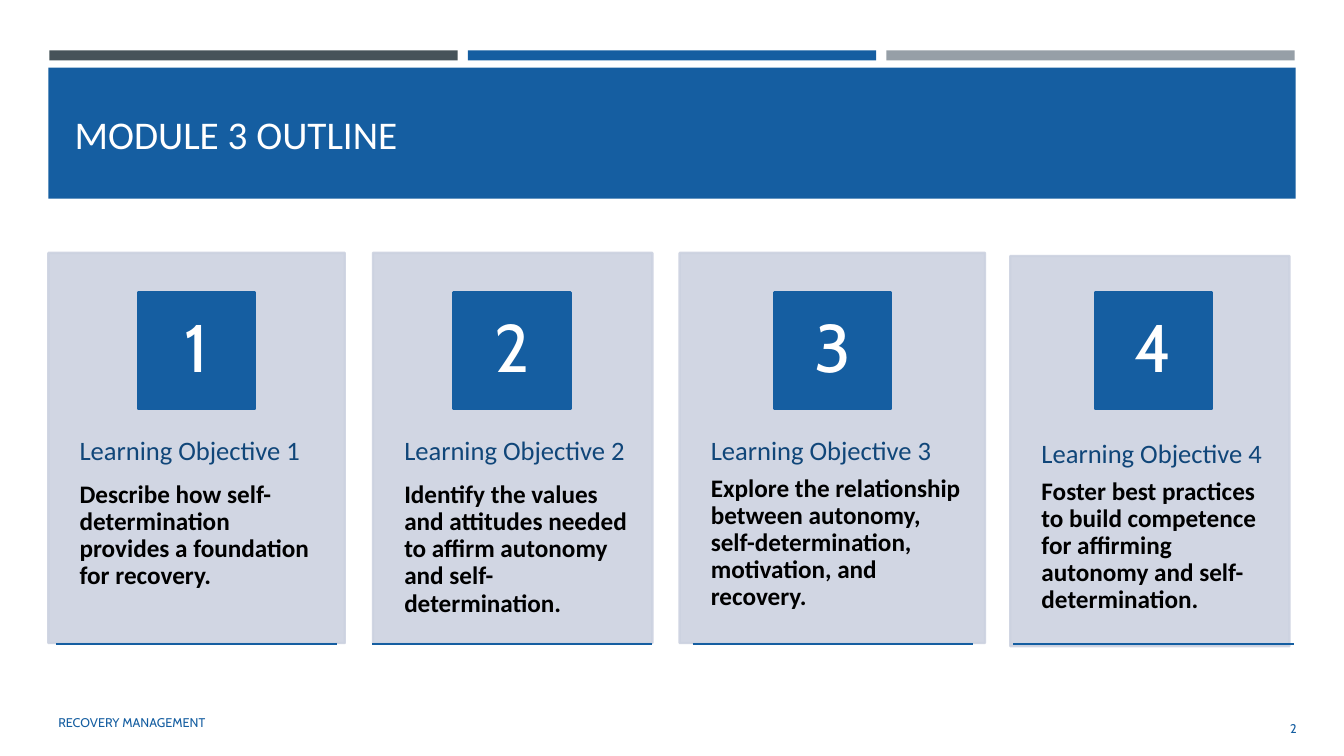
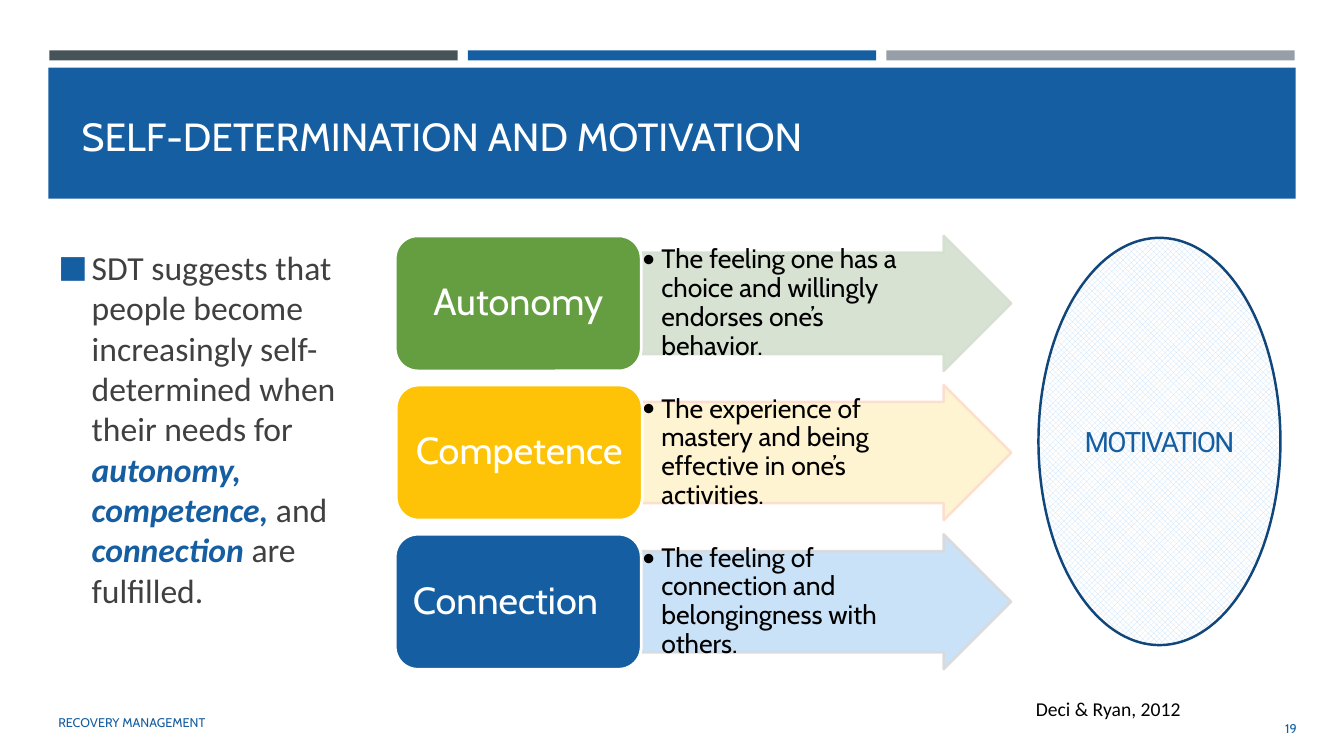
from lxml.etree import SubElement
from pptx import Presentation
from pptx.dml.color import RGBColor
from pptx.enum.dml import MSO_PATTERN
from pptx.enum.shapes import MSO_CONNECTOR, MSO_SHAPE
from pptx.enum.text import MSO_ANCHOR, MSO_AUTO_SIZE, PP_ALIGN
from pptx.oxml.ns import qn
from pptx.util import Inches, Pt

COLORS = {
    "blue": "155EA1", "navy": "104679", "slate": "465359", "gray": "969FA7",
    "white": "FFFFFF", "black": "000000", "text": "404040", "card": "CCD2E0",
    "green": "649E40", "pale_green": "D3DFCF", "yellow": "FEC306",
    "pale_yellow": "FFF3CD", "pale_orange": "FBDCCC",
    "pale_blue": "C5DFF7", "pale_gray": "D9D9D9",
}
FOOTER = "RECOVERY MANAGEMENT"

# objective, card left, card width, card top, centre of number, gap after heading
OBJECTIVES = [
    ("Describe how self-determination provides a foundation for recovery.",
     0.48, 2.94, 2.51, 1.95, 11),
    ("Identify the values and attitudes needed to affirm autonomy and "
     "self-determination.", 3.7, 2.77, 2.51, 5.08, 11),
    ("Explore the relationship between autonomy, self-determination, "
     "motivation, and recovery.", 6.74, 3.03, 2.51, 8.26, 6.5),
    ("Foster best practices to build competence for affirming autonomy and "
     "self-determination.", 10.02, 2.77, 2.54, 11.44, 6.5),
]
SDT_TEXT = [
    ("SDT suggests that people become increasingly self-determined when "
     "their needs for ", False),
    ("autonomy, competence,", True),
    (" and ", False),
    ("connection", True),
    (" are fulfilled.", False),
]
# need, meaning, box left, box alignment, box fill, arrow fill, arrow line
NEEDS = [
    ("Autonomy", "The feeling one has a choice and willingly endorses one’s behavior.",
     3.92, PP_ALIGN.CENTER, "green", "pale_green", "pale_green"),
    ("Competence", "The experience of mastery and being effective in one’s activities.",
     3.93, PP_ALIGN.CENTER, "yellow", "pale_yellow", "pale_orange"),
    ("Connection", "The feeling of connection and belongingness with others.",
     3.92, PP_ALIGN.LEFT, "blue", "pale_blue", "pale_gray"),
]


def rgb(name):
    return RGBColor.from_string(COLORS[name])


def place(sp, left, top, width, height):
    sp.left, sp.top = Inches(left), Inches(top)
    sp.width, sp.height = Inches(width), Inches(height)


def add_run(p, text, size, color, font="Calibri", bold=False, italic=False):
    r = p.add_run()
    r.text = text
    r.font.size, r.font.name = Pt(size), font
    r.font.bold, r.font.italic = bold, italic
    r.font.color.rgb = rgb(color)
    return r


def set_frame(tf, insets=(0.1, 0.05, 0.1, 0.05), anchor=MSO_ANCHOR.MIDDLE):
    """Wrap the text and set its insets (left, top, right, bottom) and anchor."""
    tf.word_wrap, tf.auto_size = True, MSO_AUTO_SIZE.NONE
    tf.vertical_anchor = anchor
    (tf.margin_left, tf.margin_top,
     tf.margin_right, tf.margin_bottom) = map(Inches, insets)


def add_box(slide, kind, box, fill, line=None, width=1.75, alpha=None):
    sp = slide.shapes.add_shape(kind, *map(Inches, box))
    sp.shadow.inherit = False
    sp.fill.solid()
    sp.fill.fore_color.rgb = rgb(fill)
    if line:
        sp.line.color.rgb = rgb(line)
        sp.line.width = Pt(width)
    else:
        sp.line.fill.background()
    if alpha:
        for clr in list(sp.element.spPr.iter(qn("a:srgbClr"))):
            SubElement(clr, qn("a:alpha"), val=str(alpha * 1000))
    return sp


def add_label(slide, text, box, size, color, font, align=PP_ALIGN.LEFT):
    sp = slide.shapes.add_textbox(*map(Inches, box))
    set_frame(sp.text_frame)
    p = sp.text_frame.paragraphs[0]
    p.alignment = align
    add_run(p, text, size, color, font)
    return sp


def add_bullet(p, char, indent, color=None, percent=None):
    pPr = p._p.get_or_add_pPr()
    pPr.set("marL", str(Inches(indent)))
    pPr.set("indent", str(-Inches(indent)))
    if color:
        SubElement(SubElement(pPr, qn("a:buClr")), qn("a:srgbClr"), val=COLORS[color])
    if percent:
        SubElement(pPr, qn("a:buSzPct"), val=str(percent * 1000))
    SubElement(pPr, qn("a:buFont"), typeface="Calibri")
    SubElement(pPr, qn("a:buChar"), char=char)


def add_master_parts(prs, slide):
    """Draw the bands and footer on a slide, then move them to the master."""
    parts = [add_box(slide, MSO_SHAPE.RECTANGLE, (0.49 + 4.15 * i, 0.5, 4.05, 0.1), color)
             for i, color in enumerate(("slate", "blue", "gray"))]
    parts.append(add_box(slide, MSO_SHAPE.RECTANGLE, (0.48, 0.67, 12.37, 1.3), "blue"))
    parts.append(add_label(slide, FOOTER, (0.48, 6.97, 7.46, 0.4), 9, "blue", "Cabin"))
    tree = prs.slide_master.shapes.element
    for i, sp in enumerate(parts):
        tree.insert(2 + i, sp.element)


def add_slide(prs, layout, title, number, left, top, font):
    slide = prs.slides.add_slide(prs.slide_layouts[layout])
    place(slide.shapes.title, left, top, 12.06, 1.11)
    tf = slide.shapes.title.text_frame
    set_frame(tf)
    tf.paragraphs[0].alignment = PP_ALIGN.LEFT
    add_run(tf.paragraphs[0], title, 28, "white", font)
    add_label(slide, str(number), (11.81, 7.03, 1.15, 0.4), 9, "blue", "Cabin",
              PP_ALIGN.RIGHT)
    return slide


def add_objective(slide, number, text, left, width, top, center, gap):
    card = add_box(slide, MSO_SHAPE.RECTANGLE, (left, top, width, 3.87),
                   "card", "card", alpha=90)
    tf = card.text_frame
    set_frame(tf, (0.31, 1.83, 0.22, 0.1), MSO_ANCHOR.TOP)
    heading, body = tf.paragraphs[0], tf.add_paragraph()
    for p in (heading, body):
        p.alignment, p.line_spacing = PP_ALIGN.LEFT, 0.9
    heading.space_after = Pt(gap)
    add_run(heading, f"Learning Objective {number}", 19, "navy")
    add_run(body, text, 18, "black", bold=True)

    square = add_box(slide, MSO_SHAPE.RECTANGLE, (center - 0.58, 2.9, 1.16, 1.16),
                     "blue", "blue")
    set_frame(square.text_frame, (0.09, 0.01, 0.09, 0.01))
    p = square.text_frame.paragraphs[0]
    p.alignment, p.line_spacing = PP_ALIGN.CENTER, 0.9
    add_run(p, str(number), 48, "white", "Cabin")

    rule = slide.shapes.add_connector(
        MSO_CONNECTOR.STRAIGHT, Inches(center - 1.39), Inches(6.39),
        Inches(center + 1.39), Inches(6.39))
    rule.line.color.rgb = rgb("blue")
    rule.line.width = Pt(1.75)
    SubElement(rule.element.spPr, qn("a:effectLst"))


def add_need(slide, top, need, meaning, left, align, fill, arrow_fill, arrow_line):
    arrow = add_box(slide, MSO_SHAPE.RIGHT_ARROW, (6.36, top, 3.67, 1.34),
                    arrow_fill, arrow_line, alpha=90)
    arrow.adjustments[0], arrow.adjustments[1] = 0.75, 0.5
    set_frame(arrow.text_frame, (0.01, 0.01, 0.35, 0.01))
    p = arrow.text_frame.paragraphs[0]
    add_bullet(p, "•", 0.19)
    p.alignment, p.line_spacing = PP_ALIGN.LEFT, 0.9
    add_run(p, meaning, 19, "black", "Cabin")

    box = add_box(slide, MSO_SHAPE.ROUNDED_RECTANGLE, (left, top, 2.44, 1.34),
                  fill, "white", 2)
    set_frame(box.text_frame, (0.11, 0.06, 0.11, 0.06))
    p = box.text_frame.paragraphs[0]
    p.alignment, p.line_spacing = align, 0.9
    add_run(p, need, 27, "white", "Cabin")


def add_sdt_text(body):
    place(body, 0.48, 2.4, 3.44, 4.12)
    set_frame(body.text_frame, anchor=MSO_ANCHOR.TOP)
    p = body.text_frame.paragraphs[0]
    add_bullet(p, "■", 0.33, "blue", 92)
    p.space_before, p.space_after = Pt(0), Pt(6)
    for text, strong in SDT_TEXT:
        add_run(p, text, 24, "blue" if strong else "text", bold=strong, italic=strong)


def add_motivation(slide):
    oval = add_box(slide, MSO_SHAPE.OVAL, (10.3, 2.36, 2.4, 4.04), "white", "navy")
    oval.fill.patterned()
    oval.fill.pattern = MSO_PATTERN.OUTLINED_DIAMOND
    oval.fill.fore_color.rgb = rgb("pale_blue")
    oval.fill.back_color.rgb = rgb("white")
    set_frame(oval.text_frame, (0, 0, 0, 0))
    p = oval.text_frame.paragraphs[0]
    p.alignment = PP_ALIGN.CENTER
    r = add_run(p, "MOTIVATION", 20, "blue", "Roboto")
    r._r.get_or_add_rPr().set("spc", "-120")


def main():
    prs = Presentation()
    prs.slide_width, prs.slide_height = Inches(13.33), Inches(7.5)

    outline = add_slide(prs, 5, "MODULE 3 OUTLINE", 2, 0.64, 0.77, "Calibri")
    add_master_parts(prs, outline)
    for number, objective in enumerate(OBJECTIVES, 1):
        add_objective(outline, number, *objective)

    motivation = add_slide(prs, 1, "SELF-DETERMINATION AND MOTIVATION", 19,
                           0.71, 0.79, "Cabin")
    add_sdt_text(motivation.placeholders[1])
    add_label(motivation, "Deci & Ryan, 2012", (9.41, 6.86, 2.4, 0.34), 14, "black",
              "Calibri", PP_ALIGN.RIGHT)
    for i, need in enumerate(NEEDS):
        add_need(motivation, 2.34 + 1.48 * i, *need)
    add_motivation(motivation)

    prs.save("out.pptx")


if __name__ == "__main__":
    main()
